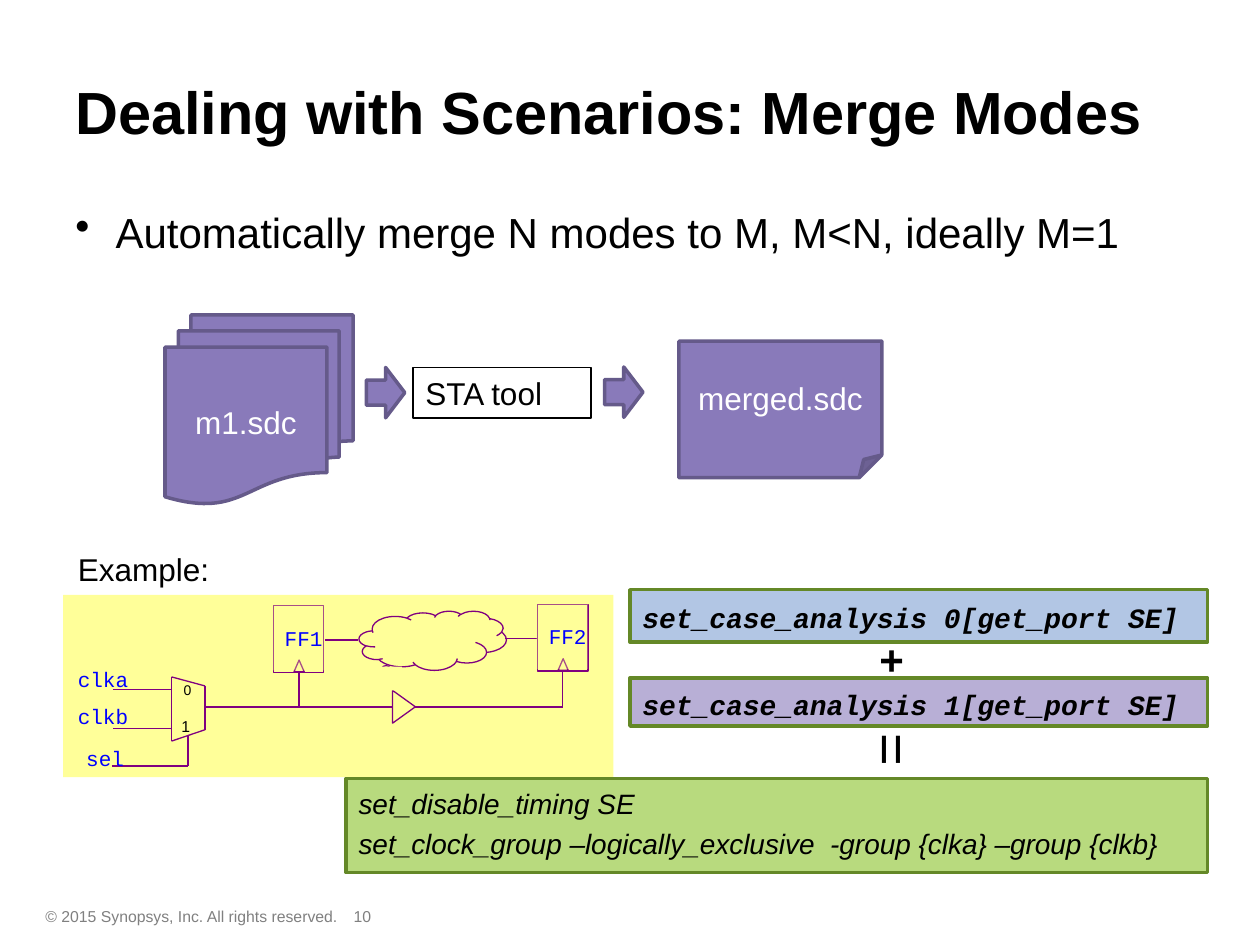
from lxml import etree
from pptx import Presentation
from pptx.dml.color import RGBColor
from pptx.enum.shapes import MSO_CONNECTOR, MSO_SHAPE
from pptx.enum.text import MSO_ANCHOR, PP_ALIGN
from pptx.oxml.ns import qn
from pptx.util import Pt

RECTANGLE, TRIANGLE = MSO_SHAPE.RECTANGLE, MSO_SHAPE.ISOSCELES_TRIANGLE
CLOUD, ARROW = MSO_SHAPE.CLOUD_CALLOUT, MSO_SHAPE.RIGHT_ARROW
DOCUMENTS, FOLDED = MSO_SHAPE.FLOWCHART_MULTIDOCUMENT, MSO_SHAPE.FOLDED_CORNER
TOP, MIDDLE = MSO_ANCHOR.TOP, MSO_ANCHOR.MIDDLE
LEFT, CENTER = PP_ALIGN.LEFT, PP_ALIGN.CENTER

THEME = {
    "sans": "Arial", "mono": "Courier New",
    "black": "000000", "white": "FFFFFF", "grey": "808080", "signal": "0000FF",
    "wire": "800080", "panel": "FFFF99", "file": "897ABA", "file_edge": "655A8A",
    "command_edge": "648827", "blue": "B2C6E4", "lilac": "B8AFD6", "green": "B8DA7E",
    "title": 34, "equals": 32, "body": 24, "label": 18, "command": 16,
    "signal_size": 12, "small": 9, "tiny": 8,
}

# Content: all positions are left, top, width, height in points
TITLE = "Dealing with Scenarios: Merge Modes"
BULLET = "Automatically merge N modes to M, M<N, ideally M=1"
FOOTERS = [("© 2015 Synopsys, Inc. All rights reserved.", (18.9, 514.8, 221.8, 18)),
           ("10", (195, 514.8, 50, 18))]
FILES = [("m1.sdc", DOCUMENTS, (94.3, 180, 107.5, 108)),
         ("merged.sdc", FOLDED, (388, 195, 116, 78))]
TOOL = ("STA tool", (236, 210, 101.7, 28.8))
FLOW_ARROWS = [(209.4, 210, 21.9, 28.8), (345.5, 209.7, 21.9, 28.8)]
COMMANDS = [
    (["set_case_analysis 0[get_port SE]"], (360, 337, 330, 30), "blue", "mono", True, 6.2),
    (["set_case_analysis 1[get_port SE]"], (360, 387.5, 330, 27.4), "lilac", "mono", True, 5.6),
    (["set_disable_timing SE",
      "set_clock_group –logically_exclusive  -group {clka} –group {clkb}"],
     (197.8, 444.8, 492.3, 53.8), "green", "sans", False, 4.6),
]
PANEL = (36, 340, 314.5, 104.2)
MUX = [(98, 386.8), (117.2, 392), (117.2, 417), (98, 423.5)]
CLOCK_Y = 404
WIRES = [
    ((64.6, 393.9), (98, 393.9)),                      # clka
    ((64.6, 416.1), (98, 416.1)),                      # clkb
    ((64, 437.8), (107.4, 437.8)),                     # sel
    ((107.4, 420.5), (107.4, 437.8)),
    ((117.2, CLOCK_Y), (321.5, CLOCK_Y)),              # shared clock
    ((170.8, 384), (170.8, CLOCK_Y)),
    ((321.5, 383.2), (321.5, CLOCK_Y)),
    ((185.6, 365.8), (204.5, 365.8)),                  # data path
    ((288.6, 364.9), (307, 364.9)),
]
FLIP_FLOPS = [("FF1", 156.3, 346.2), ("FF2", 307.2, 345.4)]
SIGNALS = [("clka", (37.4, 377.4)), ("clkb", (37.4, 398.2)), ("sel", (42.2, 422.5))]
MUX_INPUTS = [("0", (105, 391), "tiny"), ("1", (103.7, 412), "small")]

presentation = Presentation()
presentation.slide_width, presentation.slide_height = Pt(720), Pt(540)
slide = presentation.slides.add_slide(presentation.slide_layouts[6])


def color(name):
    return RGBColor.from_string(THEME[name])


def write(shape, lines, size, ink="black", font="sans", bold=False, italic=False,
          align=LEFT, anchor=TOP, wrap=True, space=0, top=3.6, side=7.2, bullet=None):
    frame = shape.text_frame
    frame.word_wrap = wrap
    frame.vertical_anchor = anchor
    frame.margin_left = frame.margin_right = Pt(side)
    frame.margin_top, frame.margin_bottom = Pt(top), Pt(min(top, 3.6))
    for index, line in enumerate(lines):
        paragraph = frame.add_paragraph() if index else frame.paragraphs[0]
        paragraph.alignment = align
        if index:
            paragraph.space_before = Pt(space)
        if bullet:
            properties = paragraph._p.get_or_add_pPr()
            properties.set("marL", str(Pt(23)))
            properties.set("indent", str(-Pt(23)))
            etree.SubElement(properties, qn("a:buChar")).set("char", bullet)
        run = paragraph.add_run()
        run.text = line
        run.font.name, run.font.size = THEME[font], Pt(THEME[size])
        run.font.bold, run.font.italic = bold, italic
        run.font.color.rgb = color(ink)


def add_text(box, text, size, **style):
    shape = slide.shapes.add_textbox(*map(Pt, box))
    write(shape, [text], size, **style)
    return shape


def add_shape(kind, box, fill=None, line=None, width=0.75):
    shape = slide.shapes.add_shape(kind, *map(Pt, box))
    shape.shadow.inherit = False
    if fill:
        shape.fill.solid()
        shape.fill.fore_color.rgb = color(fill)
    else:
        shape.fill.background()
    if line:
        shape.line.color.rgb = color(line)
        shape.line.width = Pt(width)
    else:
        shape.line.fill.background()
    return shape


def add_wire(start, end):
    wire = slide.shapes.add_connector(MSO_CONNECTOR.STRAIGHT, *map(Pt, start + end))
    wire.line.color.rgb = color("wire")
    wire.line.width = Pt(0.75)
    etree.SubElement(wire._element.spPr, qn("a:effectLst"))


# Title, bullet and footer
add_text((36, 18, 684, 90), TITLE, "title", bold=True, anchor=MIDDLE)
add_text((36, 111.6, 648, 57), BULLET, "body", bullet="•", top=6.5)
for text, box in FOOTERS:
    add_text(box, text, "small", ink="grey")

# Circuit: panel, wires and multiplexer outline
add_shape(RECTANGLE, PANEL, "panel")
for start, end in WIRES + list(zip(MUX, MUX[1:] + MUX[:1])):
    add_wire(start, end)

# Clock buffer and logic cloud, with its tail covered
buffer = add_shape(TRIANGLE, (221.5, 397.4, 18.7, 13), "panel", "wire")
buffer.rotation = 90
cloud = add_shape(CLOUD, (205.2, 349.2, 84.2, 33.8), line="wire")
cloud.adjustments[0], cloud.adjustments[1] = -0.438, 0.701
add_shape(RECTANGLE, (200.2, 380.9, 29.5, 13.7), "panel")

# Flip-flops under a translucent tint
for text, left, top in FLIP_FLOPS:
    add_shape(RECTANGLE, (left, top, 28.8, 38), line="wire")
    add_shape(TRIANGLE, (left + 11.7, top + 31, 5.8, 6.7), line="wire")
    tint = add_shape(RECTANGLE, (left - 0.7, top - 0.6, 29.5, 37.6), "panel")
    fill_color = tint._element.spPr.find(qn("a:solidFill"))[0]
    etree.SubElement(fill_color, qn("a:alpha")).set("val", "31000")
    write(tint, [text], "signal_size", ink="signal", font="mono", anchor=MIDDLE, wrap=False)

# Signal names
for text, corner in SIGNALS:
    add_text(corner + (43.2, 21.6), text, "signal_size", ink="signal", font="mono", wrap=False)
for text, corner, size in MUX_INPUTS:
    label = add_shape(RECTANGLE, corner + (3.6, 6.5), "panel")
    write(label, [text], size, anchor=MIDDLE, wrap=False, top=0, side=0)

# Commands and the signs between them
for lines, box, fill, font, bold, top in COMMANDS:
    command = add_shape(RECTANGLE, box, fill, "command_edge", 2)
    write(command, lines, "command", font=font, bold=bold, italic=True, space=3.8, top=top)
add_text((495.4, 358.6, 28.8, 36), "+", "body", bold=True, wrap=False)
equals = add_text((490.3, 409.7, 41.8, 46), "=", "equals")
equals.rotation = 90

# Merge flow
for text, kind, box in FILES:
    write(add_shape(kind, box, "file", "file_edge", 2), [text], "label",
          ink="white", align=CENTER, anchor=MIDDLE)
write(add_shape(RECTANGLE, TOOL[1], line="black", width=1), [TOOL[0]], "label", wrap=False)
for box in FLOW_ARROWS:
    add_shape(ARROW, box, "file", "file_edge", 2)
add_text((37.4, 311, 95, 28.8), "Example:", "label", wrap=False)

presentation.save("out.pptx")
